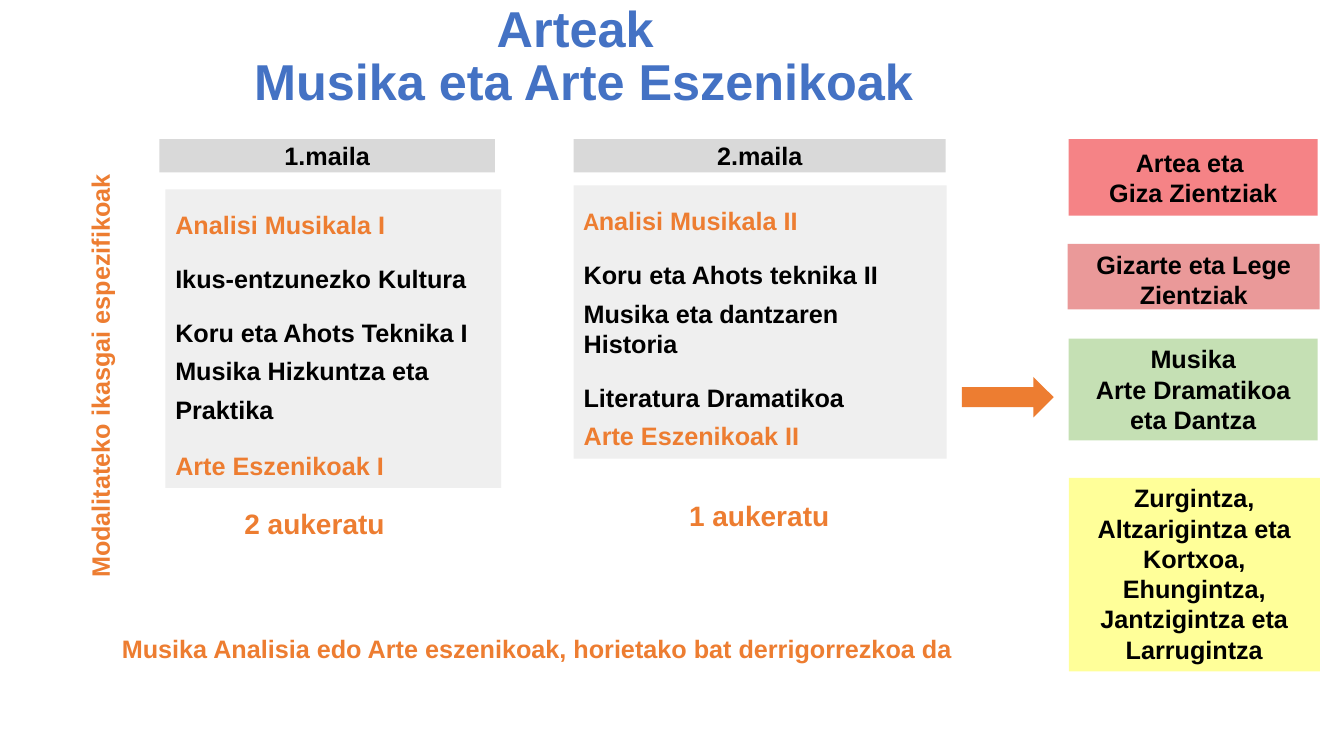
from dataclasses import dataclass

from pptx import Presentation
from pptx.dml.color import RGBColor
from pptx.enum.shapes import MSO_SHAPE as Shape
from pptx.enum.text import MSO_ANCHOR as Anchor, MSO_AUTO_SIZE as AutoSize, PP_ALIGN as Align
from pptx.util import Inches, Pt

COLORS = {
    "title": "4472C4",
    "accent": "ED7D31",
    "text": "000000",
    "header": "D9D9D9",
    "panel": "EFEFEF",
    "arts": "F58386",
    "social": "EA9999",
    "music": "C5E0B4",
    "crafts": "FFFF99",
}


@dataclass
class Line:
    text: str
    color: str = "text"
    spacing: float = 1.0
    before: int = 0
    margin: float = 0
    indent: float = 0
    initial_font: str = ""

    def pieces(self, font):
        if self.initial_font:
            return [(self.text[0], self.initial_font), (self.text[1:], font)]
        return [(self.text, font)]


class SlideBuilder:
    font = "Arial"

    def __init__(self, slide):
        self.slide = slide

    def set_text(self, shape, lines, size=18, align=Align.CENTER, anchor=Anchor.TOP):
        frame = shape.text_frame
        frame.word_wrap = True
        frame.auto_size = AutoSize.NONE
        frame.vertical_anchor = anchor
        frame.margin_left = frame.margin_right = Inches(0.1)
        frame.margin_top = frame.margin_bottom = Inches(0.05)
        for index, line in enumerate(lines):
            paragraph = frame.add_paragraph() if index else frame.paragraphs[0]
            paragraph.alignment = align
            paragraph.line_spacing = line.spacing
            paragraph.space_before = Pt(line.before)
            if line.margin:
                properties = paragraph._p.get_or_add_pPr()
                properties.set("marL", str(Inches(line.margin)))
                properties.set("indent", str(Inches(line.indent)))
            for text, font in line.pieces(self.font):
                run = paragraph.add_run()
                run.text = text
                run.font.name = font
                run.font.size = Pt(size)
                run.font.bold = True
                run.font.color.rgb = RGBColor.from_string(COLORS[line.color])

    def title(self, box, text):
        title = self.slide.shapes.title
        title.left, title.top, title.width, title.height = map(Inches, box)
        self.set_text(title, [Line(text, "title")], size=36)

    def label(self, box, line, size=18, align=Align.CENTER, rotation=0):
        label = self.slide.shapes.add_textbox(*map(Inches, box))
        label.rotation = rotation
        self.set_text(label, [line], size, align)

    def block(self, box, fill, kind=Shape.RECTANGLE):
        block = self.slide.shapes.add_shape(kind, *map(Inches, box))
        block.shadow.inherit = False
        block.fill.solid()
        block.fill.fore_color.rgb = RGBColor.from_string(COLORS[fill])
        block.line.fill.background()
        return block

    def panel(self, box, fill, lines, align=Align.CENTER, anchor=Anchor.TOP):
        self.set_text(self.block(box, fill), lines, align=align, anchor=anchor)


def main():
    deck = Presentation()
    deck.slide_width, deck.slide_height = Inches(13.33), Inches(7.5)
    page = SlideBuilder(deck.slides.add_slide(deck.slide_layouts[5]))

    page.title((1.29, 0.45, 9, 0.62), "Musika eta Arte Eszenikoak")
    page.label((4.82, -0.08, 1.77, 0.71), Line("Arteak", "title"), size=36)

    first_year = [
        Line("Analisi Musikala I", "accent", 1.5),
        Line("Ikus-entzunezko Kultura", spacing=1.5, before=6),
        Line("Koru eta Ahots Teknika I", spacing=1.5, before=6),
        Line("Musika Hizkuntza eta", before=6),
        Line("Praktika", before=6),
        Line("Arte Eszenikoak I", "accent", before=18, margin=0.09, indent=-0.09),
    ]
    second_year = [
        Line("Analisi Musikala II", "accent", 1.5, initial_font="Calibri"),
        Line("Koru eta Ahots teknika II", spacing=1.5, before=6),
        Line("Musika eta dantzaren Historia", before=6),
        Line("Literatura Dramatikoa", spacing=1.5, before=6),
        Line("Arte Eszenikoak II", "accent", before=6, margin=0.09, indent=-0.09),
    ]
    years = [
        ("1.maila", (1.58, 1.38, 3.33, 0.33), first_year, (1.64, 1.88, 3.33, 2.96),
         "2 aukeratu", (1.42, 4.98, 3.4, 0.43)),
        ("2.maila", (5.69, 1.38, 3.69, 0.33), second_year, (5.69, 1.84, 3.7, 2.71),
         "1 aukeratu", (5.84, 4.9, 3.38, 0.43)),
    ]
    for year, year_box, subjects, subjects_box, choice, choice_box in years:
        page.panel(year_box, "header", [Line(year)], anchor=Anchor.MIDDLE)
        page.panel(subjects_box, "panel", subjects, align=Align.LEFT)
        page.label(choice_box, Line(choice, "accent"), size=20)

    page.label((-1.2, 3.53, 4.48, 0.5),
               Line("Modalitateko ikasgai espezifikoak", "accent", margin=2.26, indent=-2.07),
               align=Align.LEFT, rotation=270)
    page.label((1.04, 6.23, 8.92, 0.69),
               Line(" Musika Analisia edo Arte eszenikoak, horietako bat derrigorrezkoa da", "accent"),
               align=Align.LEFT)

    page.block((9.54, 3.74, 0.91, 0.4), "accent", Shape.RIGHT_ARROW)

    pathways = [
        ((10.6, 1.38, 2.47, 0.76), "arts", ["Artea eta ", "Giza Zientziak"], Anchor.MIDDLE),
        ((10.59, 2.42, 2.5, 0.65), "social", ["Gizarte eta Lege Zientziak"], Anchor.TOP),
        ((10.6, 3.36, 2.47, 1.01), "music", ["Musika", "Arte Dramatikoa eta Dantza"], Anchor.TOP),
        ((10.6, 4.74, 2.49, 1.92), "crafts",
         ["Zurgintza, Altzarigintza eta Kortxoa, Ehungintza, Jantzigintza eta Larrugintza"],
         Anchor.TOP),
    ]
    for box, fill, texts, anchor in pathways:
        page.panel(box, fill, [Line(text) for text in texts], anchor=anchor)

    deck.save("out.pptx")


if __name__ == "__main__":
    main()
